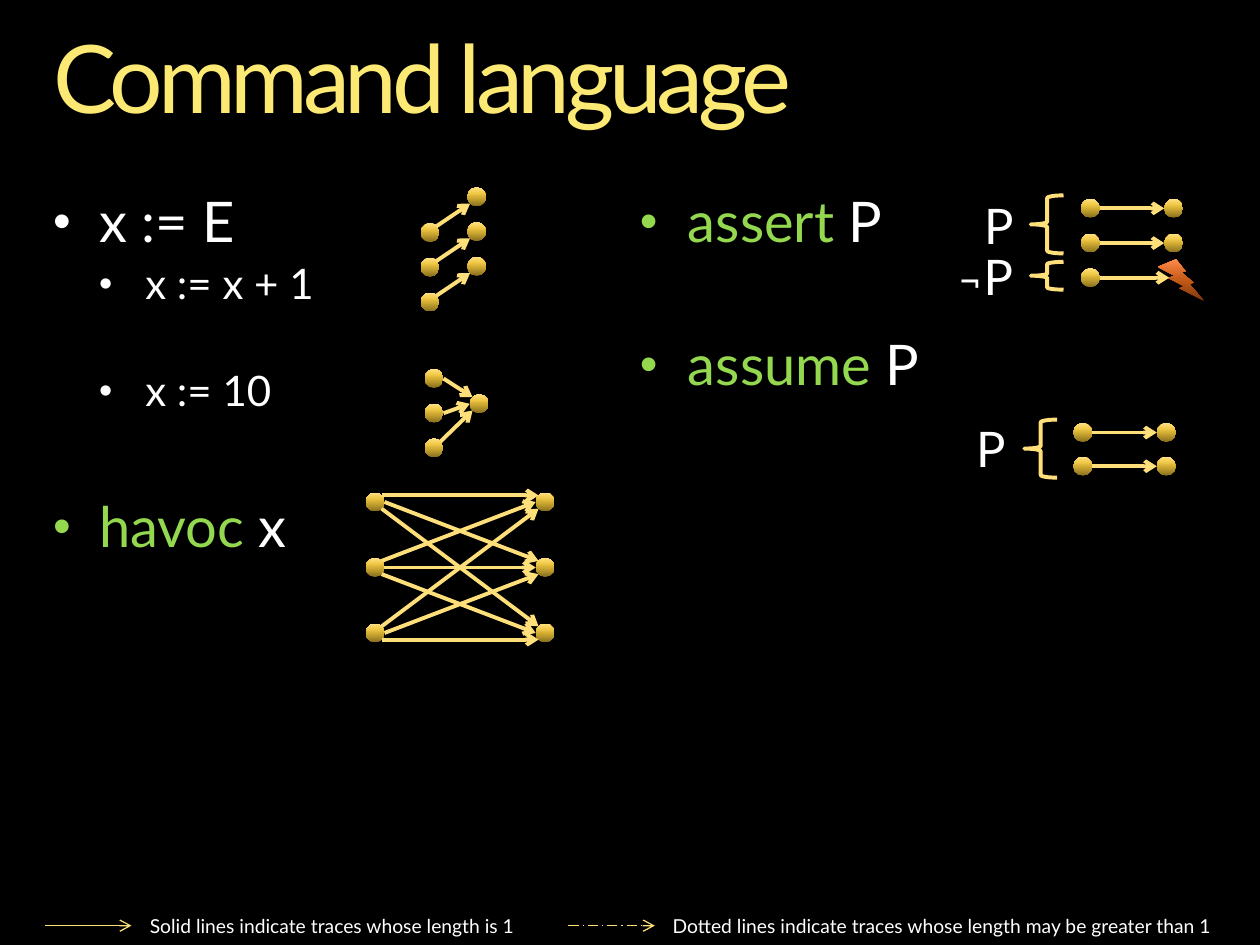
from lxml import etree
from pptx import Presentation
from pptx.dml.color import RGBColor
from pptx.enum.dml import MSO_LINE
from pptx.enum.shapes import MSO_CONNECTOR, MSO_SHAPE
from pptx.enum.text import PP_ALIGN
from pptx.oxml.ns import qn
from pptx.util import Cm, Pt

STRAIGHT = MSO_CONNECTOR.STRAIGHT
OVAL, BOLT, BRACE = MSO_SHAPE.OVAL, MSO_SHAPE.LIGHTNING_BOLT, MSO_SHAPE.LEFT_BRACE
LEFT, RIGHT = PP_ALIGN.LEFT, PP_ALIGN.RIGHT
DASH_DOT = MSO_LINE.LONG_DASH_DOT

THEME = {
    "background": "000000", "title": "FCE974", "text": "FFFFFF",
    "keyword": "94D850", "line": "FFDF79",
    "gold": [(0, "876E1E"), (50, "D5AF34"), (70, "F1C948"), (100, "FFE183")],
    "orange": [(0, "7C370C"), (50, "C35918"), (70, "DB6C2A"), (100, "FF8A4A")],
    "font": "Lato", "symbol_font": "Karla",
    "title_size": 54, "body_sizes": (32, 24), "label_size": 28, "legend_size": 11,
    "thick": 2.25, "thin": 0.75,
}

# Content: all lengths in centimetres
TITLE = "Command language"

# Each body: box, indent step, lines of (level, space before in points, spans)
BODIES = [
    ((1.07, 3.91, 11.43, 10.64), 0.93, [
        (0, 0, [("x := E", "text")]),
        (1, 5, [("x := x + 1", "text")]),
        (1, 35.5, [("x := 10", "text")]),
        (0, 47.5, [("havoc", "keyword"), (" x", "text")]),
    ]),
    ((12.9, 3.91, 11.43, 10.26), 0.97, [
        (0, 0, [("assert", "keyword"), (" P", "text")]),
        (0, 47.5, [("assume", "keyword"), (" P", "text")]),
    ]),
]

DOT = 0.38
SITES = {"ne": (0.85, 0.15), "e": (1, 0.5), "se": (0.85, 0.85),
         "nw": (0.15, 0.15), "w": (0, 0.5), "sw": (0.15, 0.85)}
EAST, WEST = ("ne", "e", "se"), ("nw", "w", "sw")

# Columns are (x, top, step, count); arrows are (from, site, to, site)
DIAGRAMS = [
    {"before": (8.48, 4.5, 0.7, 3), "after": (9.42, 3.78, 0.7, 3),
     "arrows": [(row, "ne", row, "sw") for row in range(3)]},
    {"before": (8.56, 7.44, 0.7, 3), "after": (9.47, 7.95, 0.7, 1),
     "arrows": [(0, "e", 0, "nw"), (1, "e", 0, "w"), (2, "ne", 0, "sw")]},
    {"before": (21.79, 4.01, 0.7, 3), "after": (23.47, 4.01, 0.7, 2),
     "arrows": [(row, "e", row, "w") for row in range(2)]},
    {"before": (21.64, 8.53, 0.68, 2), "after": (23.32, 8.53, 0.68, 2),
     "arrows": [(row, "e", row, "w") for row in range(2)]},
    {"before": (7.37, 9.93, 1.32, 3), "after": (10.8, 9.93, 1.32, 3),
     "arrows": [(start, EAST[end], end, WEST[start])
                for start in range(3) for end in range(3)]},
]

BOLT_BOX = (23.34, 5.23, 0.94, 0.84)
BOLT_ARROW = ((22.17, 5.6), (23.57, 5.6))
BRACES = [(20.78, 3.94, 0.66, 1.17), (20.78, 5.28, 0.66, 0.56), (20.65, 8.46, 0.66, 1.17)]
LABELS = [
    ((18.85, 3.81, 1.83, 1.45), [("P", "font")]),
    ((17.88, 4.85, 2.79, 1.45), [("¬", "symbol_font"), ("P", "font")]),
    ((18.69, 8.31, 1.83, 1.45), [("P", "font")]),
]
LEGEND = [
    ((2.77, 18.31, 8.41, 0.74), "Solid lines indicate traces whose length is 1", 0.91, None),
    ((13.31, 18.31, 12.14, 0.74),
     "Dotted lines indicate traces whose length may be greater than 1", 11.46, DASH_DOT),
]
LEGEND_Y, LEGEND_LENGTH = 18.66, 1.74


def color(name):
    return RGBColor.from_string(THEME[name])


def add_box(page, place, inset=True):
    box = page.shapes.add_textbox(*map(Cm, place))
    frame = box.text_frame
    frame.word_wrap = True
    if not inset:
        for side in ("left", "top", "right", "bottom"):
            setattr(frame, f"margin_{side}", 0)
    return frame


def add_span(para, text, size, tint="text", font="font"):
    span = para.add_run()
    span.text = text
    for key, value in {"name": THEME[font], "size": Pt(size)}.items():
        setattr(span.font, key, value)
    span.font.color.rgb = color(tint)
    return span


def add_bullet(para, level, step, tint):
    props = para._p.get_or_add_pPr()
    props.set("marL", str(Cm(step * (level + 1))))
    props.set("indent", str(-Cm(step)))
    bullet_color = etree.SubElement(props, qn("a:buClr"))
    etree.SubElement(bullet_color, qn("a:srgbClr"), val=THEME[tint])
    etree.SubElement(props, qn("a:buSzPct"), val="90000")
    etree.SubElement(props, qn("a:buFont"), typeface="Arial")
    etree.SubElement(props, qn("a:buChar"), char="•")


def add_shaded(page, kind, place, stops):
    shape = page.shapes.add_shape(kind, *map(Cm, place))
    shape.shadow.inherit = False
    shape.line.fill.background()
    shape.fill.gradient()
    gradient = shape._element.spPr.find(qn("a:gradFill"))
    for child in list(gradient):
        gradient.remove(child)
    stop_list = etree.SubElement(gradient, qn("a:gsLst"))
    for percent, tint in THEME[stops]:
        stop = etree.SubElement(stop_list, qn("a:gs"), pos=str(percent * 1000))
        etree.SubElement(stop, qn("a:srgbClr"), val=tint)
    etree.SubElement(gradient, qn("a:lin"), ang="16200000", scaled="0")


def add_arrow(page, start, end, weight="thick", dash=None):
    arrow = page.shapes.add_connector(STRAIGHT, *map(Cm, (*start, *end)))
    arrow.line.color.rgb = color("line")
    arrow.line.width = Pt(THEME[weight])
    if dash is not None:
        arrow.line.dash_style = dash
    etree.SubElement(arrow.line._get_or_add_ln(), qn("a:tailEnd"), type="arrow")
    etree.SubElement(arrow._element.spPr, qn("a:effectLst"))


def column(x, top, step, count):
    return [(x, top + step * row) for row in range(count)]


def site(dot, name):
    return tuple(start + DOT * share for start, share in zip(dot, SITES[name]))


deck = Presentation()
deck.slide_width, deck.slide_height = Cm(25.4), Cm(19.05)
page = deck.slides.add_slide(deck.slide_layouts[6])
page.background.fill.solid()
page.background.fill.fore_color.rgb = color("background")

# Title
para = add_box(page, (1.07, 0.64, 23.29, 2.08), inset=False).paragraphs[0]
para.line_spacing = 0.9
span = add_span(para, TITLE, THEME["title_size"], "title")
span.font._element.set("spc", "-300")

# Bulleted commands
for place, step, lines in BODIES:
    frame = add_box(page, place, inset=False)
    for number, (level, gap, spans) in enumerate(lines):
        para = frame.add_paragraph() if number else frame.paragraphs[0]
        add_bullet(para, level, step, spans[0][1])
        for key, value in {"level": level, "line_spacing": 0.9, "space_before": Pt(gap)}.items():
            setattr(para, key, value)
        for text, tint in spans:
            add_span(para, text, THEME["body_sizes"][level], tint)

# State diagrams
for diagram in DIAGRAMS:
    before, after = column(*diagram["before"]), column(*diagram["after"])
    for dot in before + after:
        add_shaded(page, OVAL, (*dot, DOT, DOT), "gold")
    for start, start_site, end, end_site in diagram["arrows"]:
        add_arrow(page, site(before[start], start_site), site(after[end], end_site))

# Failing assertion
add_shaded(page, BOLT, BOLT_BOX, "orange")
add_arrow(page, *BOLT_ARROW)

# Braces and their labels
for place in BRACES:
    brace = page.shapes.add_shape(BRACE, *map(Cm, place))
    brace.shadow.inherit = False
    brace.fill.background()
    brace.line.color.rgb = color("line")
    brace.line.width = Pt(THEME["thick"])
for place, spans in LABELS:
    para = add_box(page, place).paragraphs[0]
    para.alignment = RIGHT
    for text, font in spans:
        add_span(para, text, THEME["label_size"], font=font)

# Legend
for place, text, x, dash in LEGEND:
    para = add_box(page, place).paragraphs[0]
    para.alignment = LEFT
    add_span(para, text, THEME["legend_size"])
    add_arrow(page, (x, LEGEND_Y), (x + LEGEND_LENGTH, LEGEND_Y), "thin", dash)

deck.save("out.pptx")
